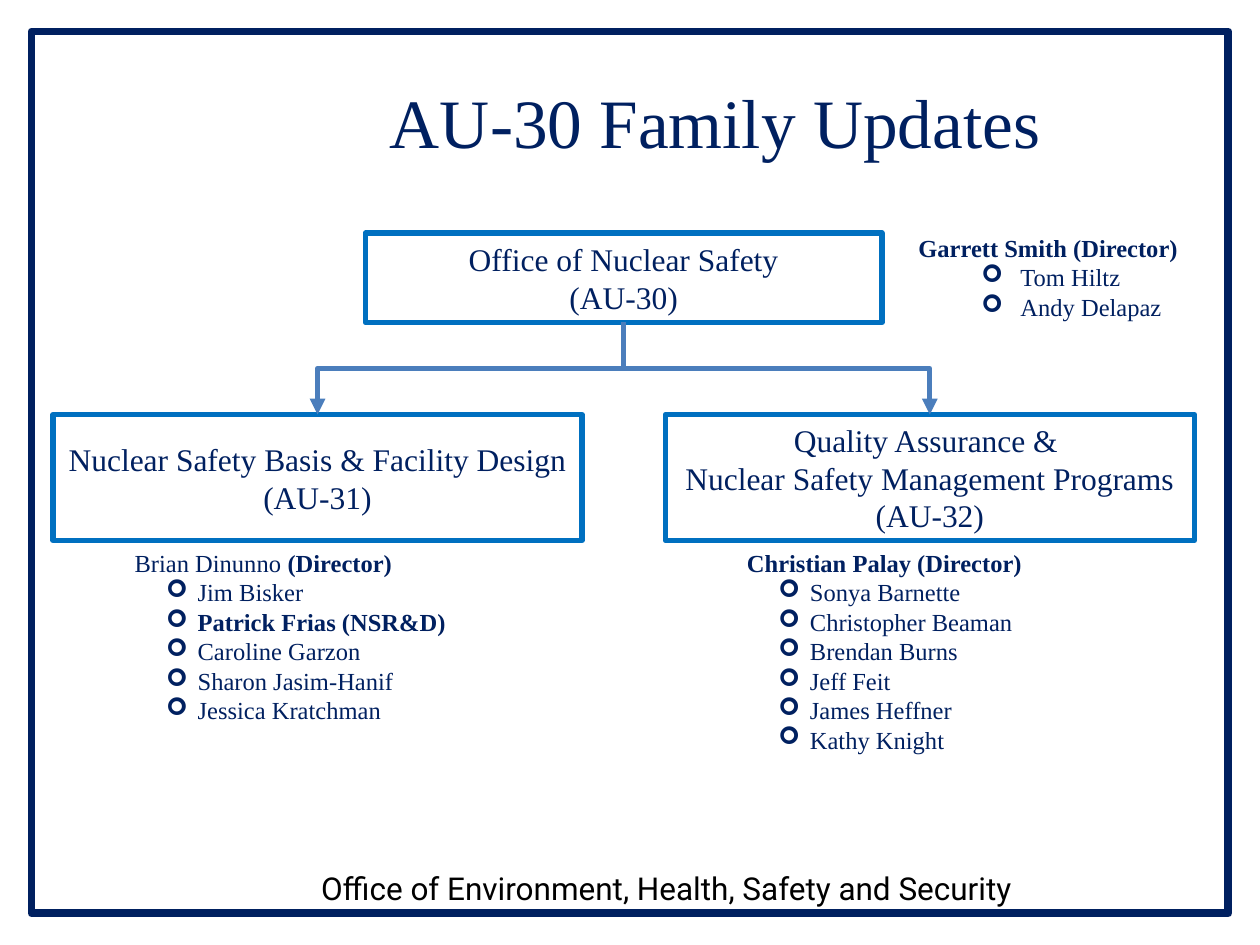
from dataclasses import dataclass

from lxml import etree
from pptx import Presentation
from pptx import util as u
from pptx.dml.color import RGBColor
from pptx.enum import shapes, text
from pptx.oxml import ns

PX = 9144  # EMU per px, at 100 px to the inch


@dataclass(frozen=True)
class Theme:
    navy: RGBColor = RGBColor(0x00, 0x20, 0x60)
    blue: RGBColor = RGBColor(0x00, 0x70, 0xC0)
    link: RGBColor = RGBColor(0x4B, 0x7E, 0xBC)
    black: RGBColor = RGBColor(0, 0, 0)
    serif: str = "Times New Roman"
    sans: str = "Roboto"
    title: float = 39.6
    office: float = 18
    staff: float = 14
    frame_line: float = 4.5
    line: float = 3


@dataclass(frozen=True)
class Area:
    left: int
    top: int
    width: int
    height: int

    @property
    def middle(self) -> int:
        return self.left + self.width // 2

    @property
    def bottom(self) -> int:
        return self.top + self.height

    def emu(self) -> list[u.Emu]:
        return [u.Emu(v * PX) for v in (self.left, self.top, self.width, self.height)]


@dataclass(frozen=True)
class Span:
    words: str
    bold: bool = False


@dataclass(frozen=True)
class Office:
    area: Area
    lines: tuple[str, ...]


@dataclass(frozen=True)
class Team:
    area: Area
    director: tuple[Span, ...]
    members: tuple[Span, ...]
    margin: int = 50
    hang: int = 25
    wrap: bool = True


THEME = Theme()
FRAME = Area(25, 25, 950, 700)
TITLE = Area(192, 60, 765, 72)
FOOTER = Area(225, 685, 608, 40)

TOP_OFFICE = Office(Area(290, 185, 410, 71), ("Office of Nuclear Safety", "(AU-30)"))
BRANCHES = (
    Office(Area(42, 329, 420, 100),
           ("Nuclear Safety Basis & Facility Design", "(AU-31)")),
    Office(Area(528, 329, 420, 100),
           ("Quality Assurance & \nNuclear Safety Management Programs", "(AU-32)")),
)
TEAMS = (
    Team(Area(719, 180, 228, 81),
         (Span("Garrett Smith (Director)", True),),
         (Span("Tom Hiltz"), Span("Andy Delapaz")),
         margin=81, hang=31, wrap=False),
    Team(Area(97, 430, 328, 151),
         (Span("Brian Dinunno "), Span("(Director)", True)),
         (Span("Jim Bisker"), Span("Patrick Frias (NSR&D)", True),
          Span("Caroline Garzon"), Span("Sharon Jasim-Hanif"),
          Span("Jessica Kratchman"))),
    Team(Area(583, 430, 250, 175),
         (Span("Christian Palay (Director)", True),),
         (Span("Sonya Barnette"), Span("Christopher Beaman"), Span("Brendan Burns"),
          Span("Jeff Feit"), Span("James Heffner"), Span("Kathy Knight"))),
)


def write(para, words: str, *, size: float, font: str = THEME.serif,
          color: RGBColor = THEME.navy, bold: bool = False, align=None) -> None:
    """Add formatted text to a paragraph; a newline is a line break."""
    if align is not None:
        para.alignment = align
    for index, part in enumerate(words.split("\n")):
        if index:
            para.add_line_break()
        span = para.add_run()
        span.text = part
        span.font.size = u.Pt(size)
        span.font.name = font
        span.font.bold = bold
        span.font.color.rgb = color


def add_bullet(para, margin: int, hang: int) -> None:
    para.level = 1
    props = para._p.get_or_add_pPr()
    props.set("marL", str(margin * PX))
    props.set("indent", str(-hang * PX))
    color = etree.SubElement(props, ns.qn("a:buClr"))
    etree.SubElement(color, ns.qn("a:srgbClr"), val=str(THEME.navy))
    etree.SubElement(props, ns.qn("a:buFont"), typeface="Wingdings")
    etree.SubElement(props, ns.qn("a:buChar"), char="➢")


def add_outline(page, area: Area, color: RGBColor, weight: float):
    box = page.shapes.add_shape(shapes.MSO_SHAPE.RECTANGLE, *area.emu())
    box.shadow.inherit = False
    box.fill.background()
    box.line.color.rgb = color
    box.line.width = u.Pt(weight)
    return box


def add_label(page, area: Area, words: str, *, anchor=text.MSO_ANCHOR.TOP, **style) -> None:
    frame = page.shapes.add_textbox(*area.emu()).text_frame
    frame.word_wrap = True
    frame.vertical_anchor = anchor
    write(frame.paragraphs[0], words, align=text.PP_ALIGN.CENTER, **style)


def add_office(page, office: Office) -> None:
    frame = add_outline(page, office.area, THEME.blue, THEME.line).text_frame
    frame.word_wrap = True
    frame.vertical_anchor = text.MSO_ANCHOR.MIDDLE
    for index, line in enumerate(office.lines):
        para = frame.add_paragraph() if index else frame.paragraphs[0]
        write(para, line, size=THEME.office, align=text.PP_ALIGN.CENTER)


def add_team(page, team: Team) -> None:
    frame = page.shapes.add_textbox(*team.area.emu()).text_frame
    frame.word_wrap = team.wrap
    frame.auto_size = text.MSO_AUTO_SIZE.SHAPE_TO_FIT_TEXT
    for span in team.director:
        write(frame.paragraphs[0], span.words, size=THEME.staff, bold=span.bold)
    for member in team.members:
        para = frame.add_paragraph()
        add_bullet(para, team.margin, team.hang)
        write(para, member.words, size=THEME.staff, bold=member.bold)


def add_branch(page, parent: Area, child: Area) -> None:
    """Draw an elbow arrow that leaves downwards, as a turned connector."""
    drop = (child.top - parent.bottom) * PX
    reach = abs(child.middle - parent.middle) * PX
    center_x = (parent.middle + child.middle) * PX // 2
    center_y = (parent.bottom + child.top) * PX // 2
    to_left = child.middle < parent.middle
    half = drop // 2 if to_left else -drop // 2
    arrow = page.shapes.add_connector(
        shapes.MSO_CONNECTOR.ELBOW,
        u.Emu(center_x - half), u.Emu(center_y - reach // 2),
        u.Emu(center_x + half), u.Emu(center_y + reach // 2))
    arrow.line.color.rgb = THEME.link
    arrow.line.width = u.Pt(THEME.line)
    props = arrow._element.spPr
    props.find(ns.qn("a:xfrm")).set("rot", str((90 if to_left else 270) * 60000))
    etree.SubElement(props.find(ns.qn("a:ln")), ns.qn("a:tailEnd"), type="triangle")
    etree.SubElement(props, ns.qn("a:effectLst"))


def main() -> None:
    deck = Presentation()
    deck.slide_width, deck.slide_height = u.Emu(1000 * PX), u.Emu(750 * PX)
    page = deck.slides.add_slide(deck.slide_layouts[6])

    # Frame, footer and title
    add_outline(page, FRAME, THEME.navy, THEME.frame_line)
    add_label(page, FOOTER, "Office of Environment, Health, Safety and Security",
              size=THEME.office, font=THEME.sans, color=THEME.black)
    add_label(page, TITLE, "AU-30 Family Updates ", size=THEME.title,
              anchor=text.MSO_ANCHOR.MIDDLE)

    # Offices and the arrows between them
    for office in (TOP_OFFICE, *BRANCHES):
        add_office(page, office)
    for branch in BRANCHES:
        add_branch(page, TOP_OFFICE.area, branch.area)

    # Staff lists
    for team in TEAMS:
        add_team(page, team)

    deck.save("out.pptx")


if __name__ == "__main__":
    main()
